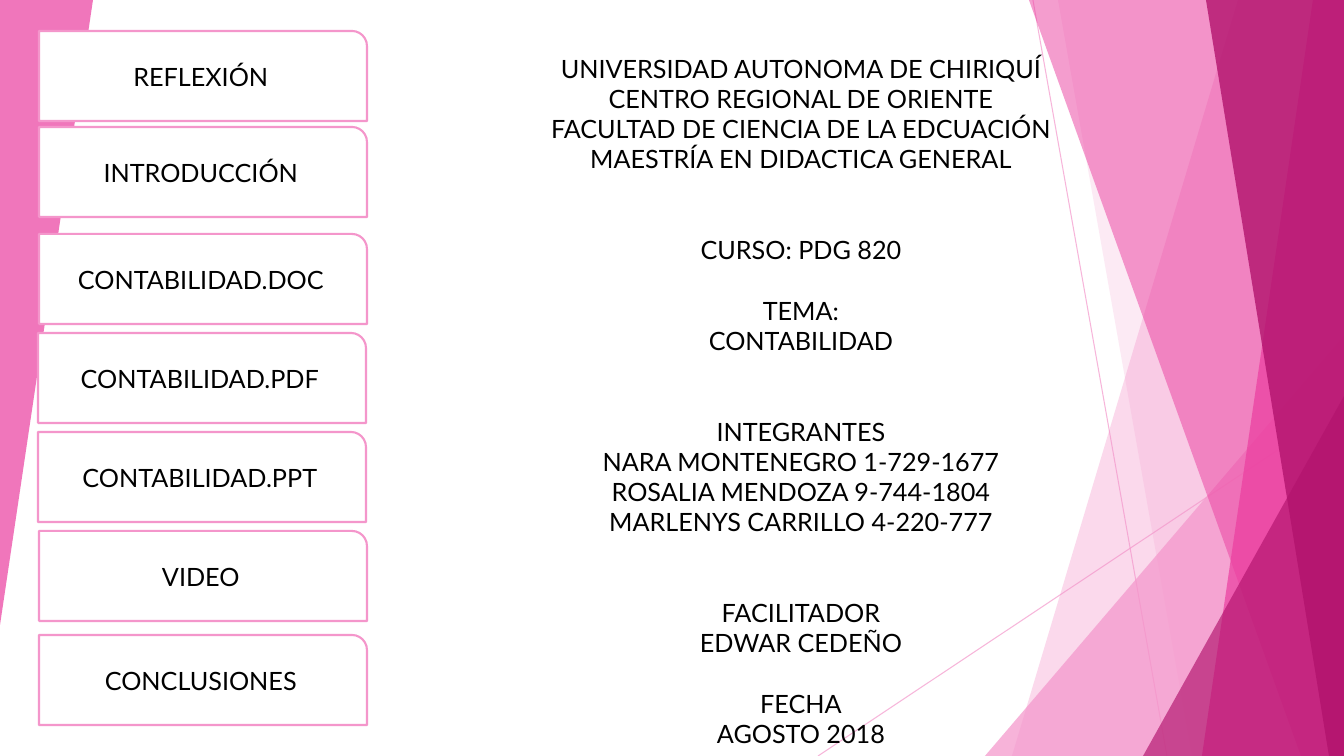
import collections

import lxml.etree
import pptx
import pptx.dml.color
import pptx.enum.shapes
import pptx.enum.text
import pptx.oxml.ns
import pptx.util

EMU_PER_PX = 914400 / 100.8
FONT_NAME = "Lato"
FONT_POINTS = 18
LINE_POINTS = 21.6
COLORS = {
    "white": "FFFFFF",
    "black": "000000",
    "light": "F496CB",
    "pink": "EB3D9F",
    "dark": "B2136D",
}
Box = collections.namedtuple("Box", "left top width height")
Facet = collections.namedtuple("Facet", "top_x bottom_x color opacity")
Wedge = collections.namedtuple("Wedge", "left top color opacity")

RAYS = [((215, 0), (349, 756)), ((526, 406), (0, 756))]
SHARDS = [
    Facet(420, 194, "light", 36),
    Facet(240, 374, "light", 20),
    Wedge(167, 336, "light", 72),
    Facet(211, 483, "pink", 50),
    Facet(495, 384, "pink", 70),
    Facet(388, 511, "dark", 80),
    Wedge(325, 396, "dark", 66),
]
BUTTONS = [
    ("REFLEXIÓN", 1, 0),
    ("INTRODUCCIÓN", 1, 96),
    ("CONTABILIDAD.DOC", 1, 203),
    ("CONTABILIDAD.PDF", 0, 302),
    ("CONTABILIDAD.PPT", 0, 401),
    ("VIDEO", 1, 500),
    ("CONCLUSIONES", 1, 604),
]
COVER_GROUPS = [
    (0, ["UNIVERSIDAD AUTONOMA DE CHIRIQUÍ", "CENTRO REGIONAL DE ORIENTE",
         "FACULTAD DE CIENCIA DE LA EDCUACIÓN", "MAESTRÍA EN DIDACTICA GENERAL"]),
    (2, ["CURSO: PDG 820"]),
    (1, ["TEMA:", "CONTABILIDAD"]),
    (2, ["INTEGRANTES", "NARA MONTENEGRO 1-729-1677",
         "ROSALIA MENDOZA 9-744-1804", "MARLENYS CARRILLO 4-220-777"]),
    (2, ["FACILITADOR", "EDWAR CEDEÑO"]),
    (1, ["FECHA", "AGOSTO 2018"]),
]


def px(length):
    """Turn pixels into EMU."""
    return pptx.util.Emu(round(length * EMU_PER_PX))


def rgb(name):
    """Look up a named colour."""
    return pptx.dml.color.RGBColor.from_string(COLORS[name])


def set_opacity(shape, percent):
    """Make the first solid colour of a shape translucent."""
    color = shape._element.spPr.find(".//" + pptx.oxml.ns.qn("a:srgbClr"))
    alpha = lxml.etree.SubElement(color, pptx.oxml.ns.qn("a:alpha"))
    alpha.set("val", str(percent * 1000))


def paint(shape, color, opacity):
    """Give a shape a translucent fill without outline or shadow."""
    shape.shadow.inherit = False
    shape.fill.solid()
    shape.fill.fore_color.rgb = rgb(color)
    shape.line.fill.background()
    set_opacity(shape, opacity)


def style_paragraph(para):
    """Centre a paragraph and set its font."""
    para.alignment = pptx.enum.text.PP_ALIGN.CENTER
    para.font.name = FONT_NAME
    para.font.size = pptx.util.Pt(FONT_POINTS)
    para.font.color.rgb = rgb("black")


def add_ray(page, box, start, end):
    """Draw one thin translucent line inside the box."""
    ray = page.shapes.add_connector(
        pptx.enum.shapes.MSO_CONNECTOR.STRAIGHT,
        px(box.left + start[0]), px(box.top + start[1]),
        px(box.left + end[0]), px(box.top + end[1]))
    ray.line.color.rgb = rgb("light")
    ray.line.width = pptx.util.Pt(0.75)
    set_opacity(ray, 70)
    lxml.etree.SubElement(ray._element.spPr, pptx.oxml.ns.qn("a:effectLst"))


def add_facet(page, box, facet):
    """Draw a full-height facet that ends at the right edge of the box."""
    right, bottom = box.left + box.width, box.top + box.height
    builder = page.shapes.build_freeform(box.left + facet.top_x, box.top, EMU_PER_PX)
    builder.add_line_segments(
        [(right, box.top), (right, bottom), (box.left + facet.bottom_x, bottom)])
    paint(builder.convert_to_shape(), facet.color, facet.opacity)


def add_wedge(page, box, color, opacity):
    """Fill the box with a right-angled triangle and return it."""
    wedge = page.shapes.add_shape(
        pptx.enum.shapes.MSO_SHAPE.ISOSCELES_TRIANGLE, *map(px, box))
    wedge.adjustments[0] = 1
    paint(wedge, color, opacity)
    return wedge


def add_right_decoration(page, box):
    """Layer rays, facets and wedges along the right side."""
    for start, end in RAYS:
        add_ray(page, box, start, end)
    for shard in SHARDS:
        if isinstance(shard, Facet):
            add_facet(page, box, shard)
        else:
            corner = Box(box.left + shard.left, box.top + shard.top,
                         box.width - shard.left, box.height - shard.top)
            add_wedge(page, corner, shard.color, shard.opacity)


def add_left_decoration(page, box):
    """Hang an inverted wedge in the top left corner."""
    add_wedge(page, box, "pink", 70).rotation = 180


def add_menu(page, box):
    """Stack the menu buttons in the box."""
    for label, shift, top in BUTTONS:
        button = page.shapes.add_shape(
            pptx.enum.shapes.MSO_SHAPE.ROUND_1_RECTANGLE,
            px(box.left + shift), px(box.top + top), px(box.width - 1), px(90))
        button.shadow.inherit = False
        button.fill.solid()
        button.fill.fore_color.rgb = rgb("white")
        button.line.color.rgb = rgb("light")
        button.line.width = pptx.util.Pt(1.5)
        frame = button.text_frame
        frame.vertical_anchor = pptx.enum.text.MSO_ANCHOR.MIDDLE
        frame.text = label
        style_paragraph(frame.paragraphs[0])


def add_cover_text(page, box):
    """Write the cover groups with whole-line gaps between them."""
    frame = page.shapes.add_textbox(*map(px, box)).text_frame
    frame.word_wrap = True
    frame.text = "\n".join(line for _, lines in COVER_GROUPS for line in lines)
    gaps = [gap if index == 0 else 0
            for gap, lines in COVER_GROUPS for index in range(len(lines))]
    for para, gap in zip(frame.paragraphs, gaps):
        style_paragraph(para)
        para.space_before = pptx.util.Pt(gap * LINE_POINTS)


def main():
    """Build the cover slide and save the deck."""
    deck = pptx.Presentation()
    deck.slide_width, deck.slide_height = px(1344), px(756)
    page = deck.slides.add_slide(deck.slide_layouts.get_by_name("Blank"))
    add_right_decoration(page, Box(818, 0, 526, 756))
    add_left_decoration(page, Box(0, 0, 93, 625))
    add_menu(page, Box(38, 31, 329, 694))
    add_cover_text(page, Box(417, 48, 768, 713))
    deck.save("out.pptx")


if __name__ == "__main__":
    main()
